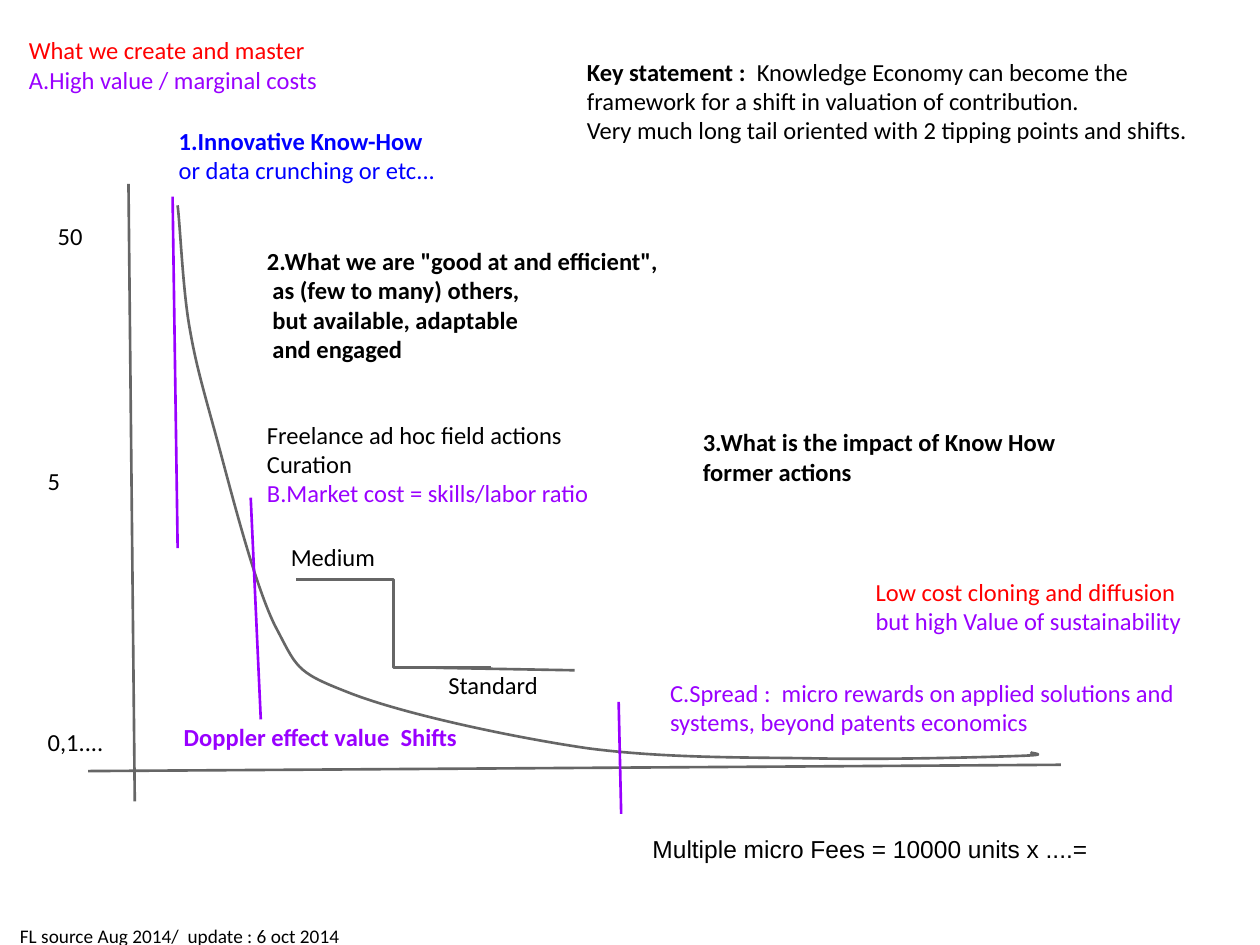
from dataclasses import dataclass

from lxml import etree
from pptx import Presentation
from pptx.dml.color import RGBColor
from pptx.enum import shapes, text
from pptx.oxml import ns
from pptx.util import Inches, Pt


@dataclass(frozen=True)
class Theme:
    black: str = "000000"
    gray: str = "666666"
    red: str = "FF0000"
    blue: str = "0000FF"
    violet: str = "9900FF"
    font: str = "Calibri"
    alt: str = "Arial"
    body: int = 14
    small: int = 11
    line: float = 1.5


T = Theme()

# Box, then paragraphs; each paragraph is a list of (words, color, bold).
NOTES = [
    ((0.28, 3.6, 0.71, 0.41), [[("5", T.black, False)]]),
    ((0.28, 5.67, 0.71, 0.41), [[("0,1....", T.black, False)]]),
    ((0.36, 1.65, 0.71, 0.41), [[("50", T.black, False)]]),
    ((5.22, 5.28, 4.7, 0.58), [
        [("C.Spread :  micro rewards on applied solutions and systems, "
          "beyond patents economics", T.violet, False)]]),
    ((2.02, 3.23, 2.79, 1.04), [
        [("Freelance ad hoc field actions", T.black, False)],
        [("Curation", T.black, False)],
        [("B.Market cost = skills/labor ratio", T.violet, False)]]),
    ((1.32, 0.9, 2.42, 0.58), [
        [("1.Innovative Know-How", T.blue, True)],
        [("or data crunching or etc...", T.blue, False)]]),
    ((0.13, 0.18, 9.92, 0.58), [
        [("What we create and master", T.red, False)],
        [("A.High value / marginal costs", T.violet, False)]]),
    ((2.02, 1.85, 5.47, 1.25), [
        [('2.What we are "good at and efficient",', T.black, True)],
        [(" as (few to many) others,", T.black, True)],
        [(" but available, adaptable", T.black, True)],
        [(" and engaged", T.black, True)]]),
    ((5.48, 3.29, 3.04, 0.95), [
        [("3.What is the impact of Know How former actions", T.black, True)]]),
    ((1.36, 5.63, 2.79, 0.58), [
        [("Doppler effect value  Shifts", T.violet, True)]]),
    ((2.21, 4.2, 1.1, 0.58), [[("Medium", T.black, False)]]),
    ((3.46, 5.22, 1.1, 0.58), [[("Standard", T.black, False)]]),
    ((6.85, 4.48, 2.72, 0.58), [
        [("Low cost cloning and diffusion", T.red, False)],
        [("but high Value of sustainability", T.violet, False)]]),
    ((4.56, 0.35, 5.25, 1.06), [
        [("Key statement :", T.black, True),
         ("  Knowledge Economy can become the framework for a shift in "
          "valuation of contribution.", T.black, False)],
        [("Very much long tail oriented with 2 tipping points and shifts.",
          T.black, False)]]),
]

AXES = [(1.02, 1.46, 1.07, 6.36), (0.7, 6.12, 8.42, 6.07)]
SHIFTS = [(1.37, 1.56, 1.41, 4.35), (1.99, 3.95, 2.07, 5.71),
          (4.91, 5.57, 4.93, 6.46)]
STEP = (2.35, 4.6, 3.9, 5.3)
BASE = (3.46, 5.3, 4.56, 5.32)

# Start point, then two handles and an end point for each segment.
TAIL = [
    (1.41, 1.63),
    (1.43, 1.78), (1.45, 2.27), (1.5, 2.57),
    (1.55, 2.87), (1.6, 3.04), (1.71, 3.44),
    (1.82, 3.84), (2.01, 4.61), (2.18, 4.96),
    (2.36, 5.3), (2.34, 5.33), (2.75, 5.49),
    (3.17, 5.66), (4.05, 5.85), (4.67, 5.94),
    (5.29, 6.02), (5.93, 6.01), (6.5, 6.02),
    (7.07, 6.03), (7.81, 6.01), (8.09, 6),
    (8.37, 5.99), (8.17, 5.98), (8.18, 5.97),
]
TAIL_WIDTH = 6.83


def assign(item, values):
    for name, value in values.items():
        setattr(item, name, value)


def add_note(slide, box, paras, size=T.body, font=T.font):
    frame = slide.shapes.add_textbox(*map(Inches, box)).text_frame
    inset = Inches(0.1)
    assign(frame, {
        "word_wrap": True, "vertical_anchor": text.MSO_ANCHOR.TOP,
        "margin_left": inset, "margin_right": inset,
        "margin_top": inset, "margin_bottom": inset,
    })
    for i, runs in enumerate(paras):
        para = frame.add_paragraph() if i else frame.paragraphs[0]
        for words, color, bold in runs:
            run = para.add_run()
            run.text = words
            assign(run.font, {"name": font, "size": Pt(size), "bold": bold})
            run.font.color.rgb = RGBColor.from_string(color)


def draw_line(line, color):
    line.color.rgb = RGBColor.from_string(color)
    line.width = Pt(T.line)


def add_line(slide, ends, color=T.gray, kind=shapes.MSO_CONNECTOR.STRAIGHT):
    link = slide.shapes.add_connector(kind, *map(Inches, ends))
    draw_line(link.line, color)
    etree.SubElement(link._element.spPr, ns.qn("a:effectLst"))


def add_curve(slide, points, width):
    """Draw Bezier segments; width is that of the curve without its handles."""
    spots = [(Inches(x), Inches(y)) for x, y in points]
    pen = slide.shapes.build_freeform(*spots[0])
    pen.add_line_segments(spots[1:], close=False)
    shape = pen.convert_to_shape()
    route = shape._element.spPr.find(".//" + ns.qn("a:path"))
    legs = route.findall(ns.qn("a:lnTo"))
    for i in range(0, len(legs), 3):
        bend = etree.SubElement(route, ns.qn("a:cubicBezTo"))
        for leg in legs[i:i + 3]:
            bend.append(leg[0])
            route.remove(leg)
    shape.width = Inches(width)
    route.set("w", str(Inches(width)))
    shape.shadow.inherit = False
    shape.fill.background()
    draw_line(shape.line, T.gray)


def main():
    deck = Presentation()
    assign(deck, {"slide_width": Inches(10), "slide_height": Inches(7.5)})
    slide = deck.slides.add_slide(deck.slide_layouts[6])
    for ends in AXES:
        add_line(slide, ends)
    add_curve(slide, TAIL, TAIL_WIDTH)
    for ends in SHIFTS:
        add_line(slide, ends, T.violet)
    add_line(slide, BASE)
    add_line(slide, STEP, kind=shapes.MSO_CONNECTOR.ELBOW)
    for box, paras in NOTES:
        add_note(slide, box, paras)
    add_note(slide, (5.08, 6.52, 4.63, 0.5), [
        [("Multiple micro Fees = 10000 units x ....=", T.black, False)]],
        font=T.alt)
    add_note(slide, (0.06, 7.24, 3.84, 0.37), [
        [("FL source Aug 2014/  update : 6 oct 2014", T.black, False)]],
        size=T.small)
    deck.save("out.pptx")


if __name__ == "__main__":
    main()
